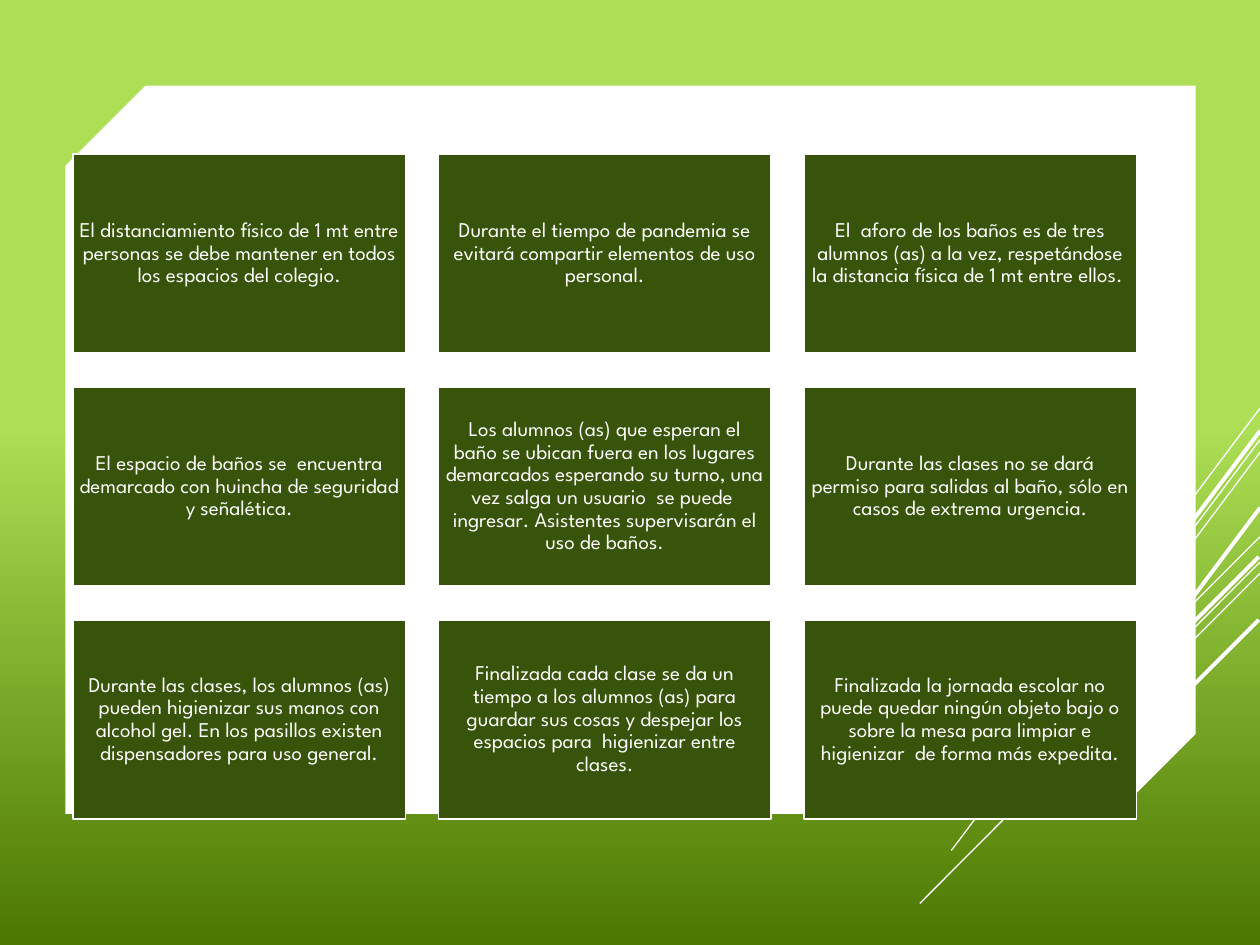
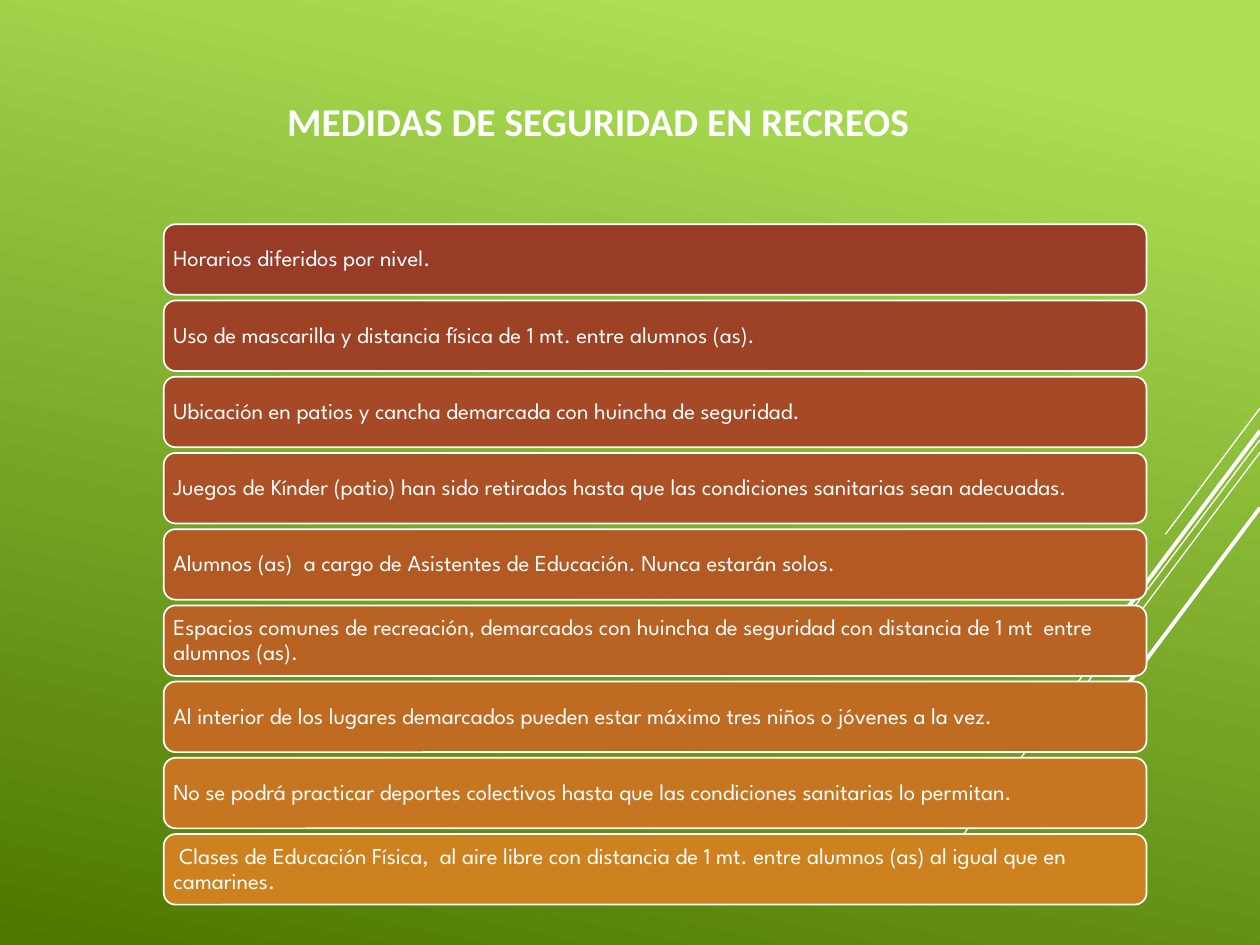
import lxml.etree
import pptx
import pptx.util
import pptx.dml.color
import pptx.enum.shapes
import pptx.enum.text
import pptx.oxml.ns

Inches = pptx.util.Inches
Pt = pptx.util.Pt
RGBColor = pptx.dml.color.RGBColor
SHAPE = pptx.enum.shapes.MSO_SHAPE
ALIGN = pptx.enum.text.PP_ALIGN

WHITE = RGBColor(0xFF, 0xFF, 0xFF)
LIME = RGBColor(0xAC, 0xDF, 0x55)
FOREST = RGBColor(0x4C, 0x78, 0x00)
OLIVE = RGBColor(0x38, 0x54, 0x0A)
BAR_COLOURS = [
    RGBColor(0x98, 0x3C, 0x27), RGBColor(0x9E, 0x42, 0x26), RGBColor(0xA5, 0x49, 0x26),
    RGBColor(0xAB, 0x51, 0x25), RGBColor(0xB2, 0x59, 0x24), RGBColor(0xB8, 0x62, 0x23),
    RGBColor(0xBF, 0x6B, 0x22), RGBColor(0xC6, 0x76, 0x20), RGBColor(0xCD, 0x81, 0x1F),
]

BODY_FONT = "League Spartan"
TITLE_FONT = "Calibri"
THIN, THICK = 0.75, 2.25

# x1, y1, x2, y2, weight
DIAGONAL_RAYS = [
    (10, 4.26, 9.17, 5.09, THIN),
    (10, 4.46, 7.3, 7.17, THIN),
    (10, 4.55, 8.28, 6.27, THIN),
    (9.99, 4.42, 8.42, 5.99, THICK),
    (9.99, 4.92, 8.85, 6.06, THICK),
]
STEEP_RAYS = [
    (10, 3.24, 9.25, 4.24, THIN),
    (10, 3.49, 7.55, 6.75, THIN),
    (10, 3.59, 8.44, 5.67, THIN),
    (10, 3.42, 8.57, 5.33, THICK),
    (10, 4.03, 8.96, 5.42, THICK),
]

CLASSROOM_RULES = [
    "El distanciamiento físico de 1 mt entre personas se debe mantener en todos los espacios del colegio.",
    "Durante el tiempo de pandemia se evitará compartir elementos de uso personal.",
    "El  aforo de los baños es de tres alumnos (as) a la vez, respetándose la distancia física de 1 mt entre ellos. ",
    "El espacio de baños se  encuentra demarcado con huincha de seguridad y señalética.",
    "Los alumnos (as) que esperan el baño se ubican fuera en los lugares demarcados esperando su turno, "
    "una vez salga un usuario  se puede  ingresar. Asistentes supervisarán el uso de baños.",
    "Durante las clases no se dará permiso para salidas al baño, sólo en casos de extrema urgencia.",
    "Durante las clases, los alumnos (as) pueden higienizar sus manos con alcohol gel. "
    "En los pasillos existen dispensadores para uso general.",
    "Finalizada cada clase se da un tiempo a los alumnos (as) para guardar sus cosas y despejar "
    "los espacios para  higienizar entre clases.",
    "Finalizada la jornada escolar no puede quedar ningún objeto bajo o sobre la mesa para limpiar "
    "e higienizar  de forma más expedita.",
]
BREAK_RULES = [
    "Horarios diferidos por nivel.",
    "Uso de mascarilla y distancia física de 1 mt. entre alumnos (as).",
    "Ubicación en patios y cancha demarcada con huincha de seguridad.",
    "Juegos de Kínder (patio) han sido retirados hasta que las condiciones sanitarias sean adecuadas.",
    "Alumnos (as)  a cargo de Asistentes de Educación. Nunca estarán solos.",
    "Espacios comunes de recreación, demarcados con huincha de seguridad con distancia de 1 mt  entre alumnos (as).",
    "Al interior de los lugares demarcados pueden estar máximo tres niños o jóvenes a la vez.",
    "No se podrá practicar deportes colectivos hasta que las condiciones sanitarias lo permitan.",
    " Clases de Educación Física,  al aire libre con distancia de 1 mt. entre alumnos (as) al igual que en camarines.",
]


class Deck:
    def __init__(self):
        self.prs = pptx.Presentation()
        self.prs.slide_width = Inches(10)
        self.prs.slide_height = Inches(7.5)
        self.s = None

    def add_slide(self, light_until, angle):
        """Start a slide; the gradient turns clockwise by angle, in degrees."""
        self.s = self.prs.slides.add_slide(self.prs.slide_layouts[6])
        fill = self.s.background.fill
        fill.gradient()
        fill.gradient_angle = 360 - angle
        for stop, colour, position in zip(fill.gradient_stops, (LIME, FOREST), (light_until, 1)):
            stop.color.rgb = colour
            stop.position = position

    def add_rays(self, rays):
        for x1, y1, x2, y2, weight in rays:
            line = self.s.shapes.add_connector(
                pptx.enum.shapes.MSO_CONNECTOR.STRAIGHT,
                Inches(x1), Inches(y1), Inches(x2), Inches(y2))
            line.line.color.rgb = WHITE
            line.line.width = Pt(weight)
            lxml.etree.SubElement(line._element.spPr, pptx.oxml.ns.qn("a:effectLst"))

    def add_shape(self, kind, x, y, w, h, colour):
        sp = self.s.shapes.add_shape(kind, Inches(x), Inches(y), Inches(w), Inches(h))
        sp.shadow.inherit = False
        sp.fill.solid()
        sp.fill.fore_color.rgb = colour
        sp.line.fill.background()
        return sp

    def add_panel(self, kind, x, y, w, h, colour, text, size, align):
        """Add a white-edged shape with its text inside."""
        sp = self.add_shape(kind, x, y, w, h, colour)
        sp.line.color.rgb = WHITE
        sp.line.width = Pt(1)
        self.add_text(sp.text_frame, text, size, BODY_FONT, align)

    def add_title(self, text):
        box = self.s.shapes.add_textbox(Inches(1.95), Inches(0.73), Inches(5.6), Inches(0.5))
        self.add_text(box.text_frame, text, 22.5, TITLE_FONT, ALIGN.CENTER, bold=True)

    def add_text(self, tf, text, size, font, align, bold=False):
        tf.word_wrap = True
        tf.vertical_anchor = pptx.enum.text.MSO_ANCHOR.MIDDLE
        tf.margin_left = tf.margin_right = tf.margin_top = tf.margin_bottom = Inches(0.05)
        p = tf.paragraphs[0]
        p.alignment = align
        p.line_spacing = 0.9
        r = p.add_run()
        r.text = text
        r.font.name = font
        r.font.size = Pt(size)
        r.font.bold = bold
        r.font.color.rgb = WHITE


def classroom_slide(deck):
    deck.add_slide(light_until=0.45, angle=90)
    deck.add_rays(DIAGONAL_RAYS + STEEP_RAYS)
    sheet = deck.add_shape(SHAPE.SNIP_2_DIAG_RECTANGLE, 0.52, 0.68, 8.97, 5.78, WHITE)
    sheet.adjustments[0] = 0.11
    sheet.adjustments[1] = 0
    for i, rule in enumerate(CLASSROOM_RULES):
        row, column = divmod(i, 3)
        deck.add_panel(SHAPE.RECTANGLE, 0.58 + 2.9 * column, 1.22 + 1.85 * row, 2.64, 1.58,
                       OLIVE, rule, 12, ALIGN.CENTER)


def break_slide(deck):
    deck.add_slide(light_until=0.1, angle=102)
    deck.add_title("MEDIDAS DE SEGURIDAD EN RECREOS")
    deck.add_rays(STEEP_RAYS)
    first, last = 1.78, 6.62
    step = (last - first) / (len(BREAK_RULES) - 1)
    for i, (rule, colour) in enumerate(zip(BREAK_RULES, BAR_COLOURS)):
        deck.add_panel(SHAPE.ROUNDED_RECTANGLE, 1.3, first + step * i, 7.8, 0.56,
                       colour, rule, 13, ALIGN.LEFT)


def main():
    deck = Deck()
    classroom_slide(deck)
    break_slide(deck)
    deck.prs.save("out.pptx")


if __name__ == "__main__":
    main()
